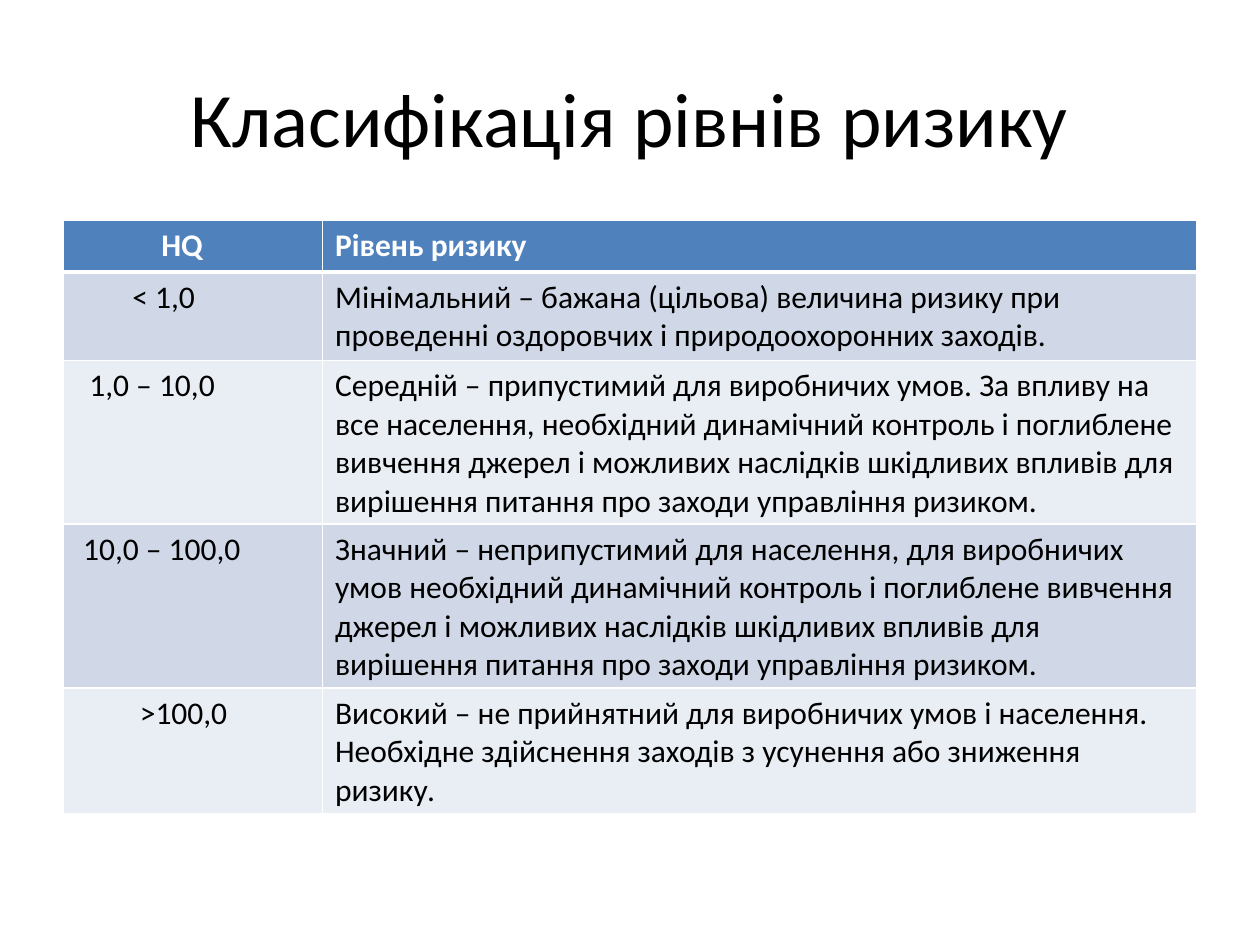
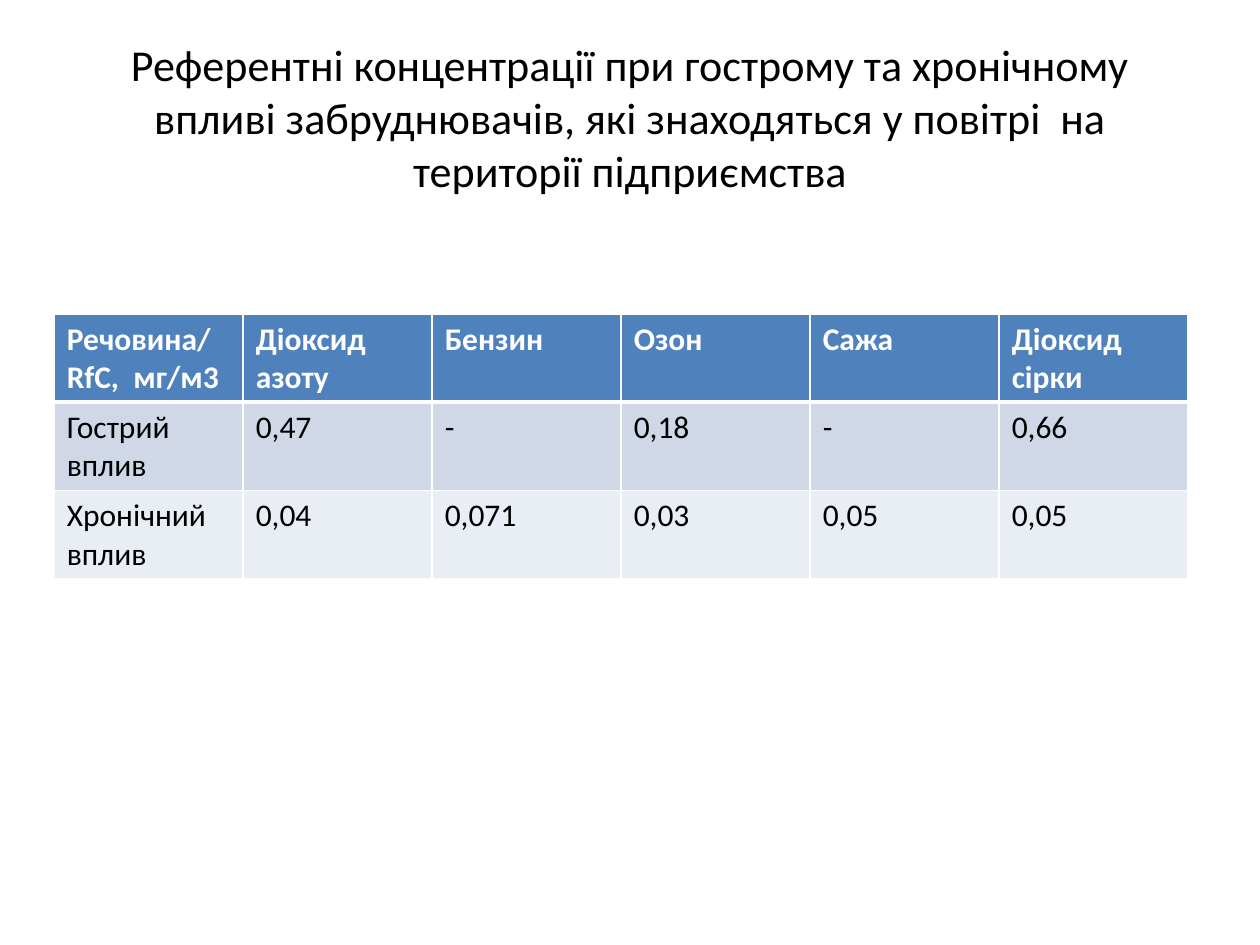
"""Build two slides on health risk levels and reference concentrations."""
from dataclasses import dataclass

import lxml.etree
import pptx
import pptx.dml.color
import pptx.enum.text
import pptx.oxml.ns
import pptx.slide
import pptx.table
import pptx.text.text
import pptx.util

Inches = pptx.util.Inches
Pt = pptx.util.Pt
RGBColor = pptx.dml.color.RGBColor

FONT = "Calibri"
BLACK = RGBColor(0x00, 0x00, 0x00)
WHITE = RGBColor(0xFF, 0xFF, 0xFF)
HEADER_BLUE = RGBColor(0x4F, 0x81, 0xBD)
BAND_COLORS = (RGBColor(0xD0, 0xD8, 0xE8), RGBColor(0xE9, 0xED, 0xF4))

BODY_SIZE = 18
CELL_MARGIN = 0.1
ROW_HEIGHT = 0.41
THIN_RULE = 1
HEADER_RULE = 3


@dataclass(frozen=True)
class TableSlide:
    """A titled table with its place, columns and first-column indents."""

    title: str
    title_size: float
    left: float
    top: float
    height: float
    column_widths: tuple[float, ...]
    rows: tuple[tuple[str, ...], ...]
    indents: tuple[float, ...]


RISK_LEVELS = TableSlide(
    title="Класифікація рівнів ризику",
    title_size=44,
    left=0.5,
    top=1.75,
    height=4.71,
    column_widths=(2.06, 6.94),
    rows=(
        ("HQ", "Рівень ризику"),
        ("˂ 1,0", "Мінімальний – бажана (цільова) величина ризику при проведенні "
                  "оздоровчих і природоохоронних заходів."),
        ("1,0 – 10,0", "Середній – припустимий для виробничих умов. За впливу на все "
                       "населення, необхідний динамічний контроль і поглиблене вивчення "
                       "джерел і можливих наслідків шкідливих впливів для вирішення "
                       "питання про заходи управління ризиком."),
        ("10,0 – 100,0", "Значний – неприпустимий для населення, для виробничих умов "
                         "необхідний динамічний контроль і поглиблене вивчення джерел "
                         "і можливих наслідків шкідливих впливів для вирішення питання "
                         "про заходи управління ризиком."),
        ("˃100,0", "Високий – не прийнятний для виробничих умов і населення. "
                   "Необхідне здійснення заходів з усунення або зниження ризику."),
    ),
    indents=(0.68, 0.45, 0.11, 0.06, 0.51),
)

CONCENTRATIONS = TableSlide(
    title="Референтні концентрації при гострому та хронічному впливі "
          "забруднювачів, які знаходяться у повітрі  на території підприємства",
    title_size=25.2,
    left=0.43,
    top=2.49,
    height=2.1,
    column_widths=(1.5,) * 6,
    rows=(
        ("Речовина/\nRfC,  мг/м3", "Діоксид азоту", "Бензин", "Озон", "Сажа", "Діоксид сірки"),
        ("Гострий вплив", "0,47", "-", "0,18", "-", "0,66"),
        ("Хронічний вплив", "0,04", "0,071", "0,03", "0,05", "0,05"),
    ),
    indents=(0, 0, 0),
)


def format_text(frame: pptx.text.text.TextFrame, size: float, color: RGBColor,
                bold: bool = False) -> None:
    """Apply one font style to every run of a text frame."""
    for para in frame.paragraphs:
        for span in para.runs:
            span.font.name = FONT
            span.font.size = Pt(size)
            span.font.bold = bold
            span.font.color.rgb = color


def add_title(page: pptx.slide.Slide, text: str, size: float) -> None:
    """Add the centred slide title."""
    box = page.shapes.add_textbox(Inches(0.5), Inches(0.3), Inches(9), Inches(1.25))
    frame = box.text_frame
    frame.word_wrap = True
    frame.vertical_anchor = pptx.enum.text.MSO_ANCHOR.MIDDLE
    frame.text = text
    frame.paragraphs[0].alignment = pptx.enum.text.PP_ALIGN.CENTER
    format_text(frame, size, BLACK)


def add_borders(cell: pptx.table._Cell, top: float, bottom: float) -> None:
    """Draw white rules on the four sides of a cell."""
    qualify = pptx.oxml.ns.qn
    properties = cell._tc.get_or_add_tcPr()
    widths = {"a:lnL": THIN_RULE, "a:lnR": THIN_RULE, "a:lnT": top, "a:lnB": bottom}
    for tag, width in widths.items():
        line = lxml.etree.SubElement(properties, qualify(tag), w=str(Pt(width)))
        fill = lxml.etree.SubElement(line, qualify("a:solidFill"))
        lxml.etree.SubElement(fill, qualify("a:srgbClr"), val=str(WHITE))


def style_cell(cell: pptx.table._Cell, row_index: int) -> None:
    """Give a cell the header style or its band style."""
    is_header = row_index == 0
    add_borders(cell,
                top=HEADER_RULE if row_index == 1 else THIN_RULE,
                bottom=HEADER_RULE if is_header else THIN_RULE)
    cell.fill.solid()
    cell.fill.fore_color.rgb = HEADER_BLUE if is_header else BAND_COLORS[(row_index - 1) % 2]
    format_text(cell.text_frame, BODY_SIZE, WHITE if is_header else BLACK, bold=is_header)


def add_data_table(page: pptx.slide.Slide, content: TableSlide) -> None:
    """Add the table and fill it row by row."""
    holder = page.shapes.add_table(
        len(content.rows), len(content.column_widths),
        Inches(content.left), Inches(content.top),
        Inches(sum(content.column_widths)), Inches(content.height))
    table = holder.table
    for column, width in zip(table.columns, content.column_widths):
        column.width = Inches(width)
    for row_index, (row, texts) in enumerate(zip(table.rows, content.rows)):
        row.height = Inches(ROW_HEIGHT)
        for cell, text in zip(row.cells, texts):
            cell.text_frame.text = text
            style_cell(cell, row_index)
        row.cells[0].margin_left = Inches(CELL_MARGIN + content.indents[row_index])
    holder.height = Inches(content.height)


def main() -> None:
    """Build and save the deck."""
    deck = pptx.Presentation()
    deck.slide_width = Inches(10)
    deck.slide_height = Inches(7.5)
    for content in (RISK_LEVELS, CONCENTRATIONS):
        page = deck.slides.add_slide(deck.slide_layouts[6])
        add_title(page, content.title, content.title_size)
        add_data_table(page, content)
    deck.save("out.pptx")


if __name__ == "__main__":
    main()
